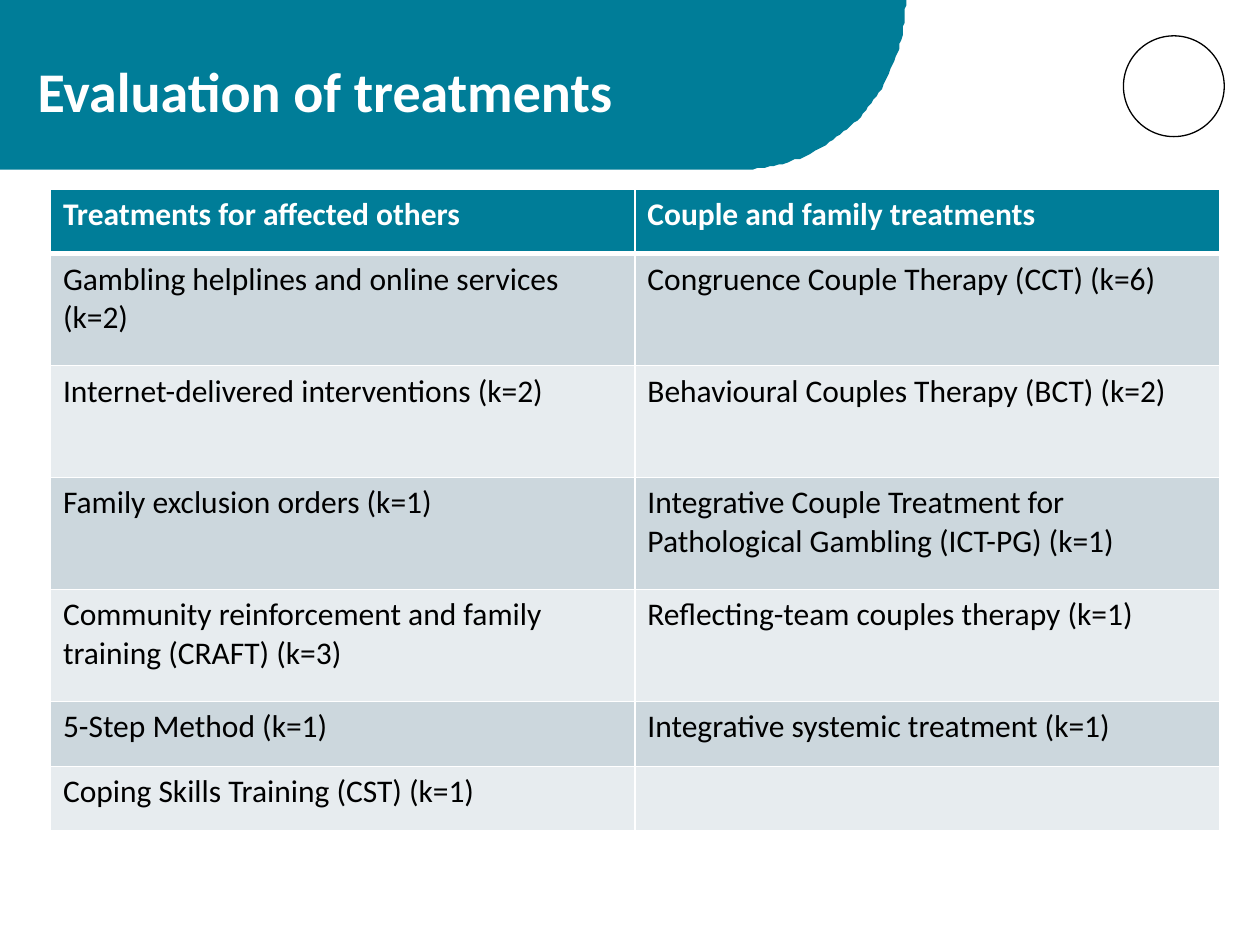
import math
from typing import NamedTuple

from lxml import etree
from pptx import Presentation
from pptx.dml.color import RGBColor
from pptx.enum.shapes import MSO_SHAPE
from pptx.enum.text import MSO_ANCHOR
from pptx.oxml.ns import qn
from pptx.util import Pt

OVAL = MSO_SHAPE.OVAL
TOP = MSO_ANCHOR.TOP
TEAL = RGBColor(0x00, 0x7D, 0x98)
BAND_DARK = RGBColor(0xCC, 0xD7, 0xDD)
BAND_LIGHT = RGBColor(0xE7, 0xEC, 0xEF)
WHITE = RGBColor(0xFF, 0xFF, 0xFF)
BLACK = RGBColor(0x00, 0x00, 0x00)
FONT = "Calibri"
BANNER_WIDTH, BANNER_HEIGHT, CURVE_WIDTH = 517.6, 97, 95
CURVE_STEPS = 60
COLUMN_WIDTH = 334


class TreatmentRow(NamedTuple):
    affected_others: str
    couple_and_family: str
    height: float


TREATMENTS = [
    TreatmentRow("Treatments for affected others", "Couple and family treatments", 37),
    TreatmentRow("Gambling helplines and online services (k=2)",
                 "Congruence Couple Therapy (CCT) (k=6)", 64),
    TreatmentRow("Internet-delivered interventions (k=2)",
                 "Behavioural Couples Therapy (BCT) (k=2)", 64),
    TreatmentRow("Family exclusion orders (k=1)",
                 "Integrative Couple Treatment for Pathological Gambling (ICT-PG) (k=1)", 64),
    TreatmentRow("Community reinforcement and family training (CRAFT) (k=3)",
                 "Reflecting-team couples therapy (k=1)", 64),
    TreatmentRow("5-Step Method (k=1)", "Integrative systemic treatment (k=1)", 37),
    TreatmentRow("Coping Skills Training (CST) (k=1)", "", 37),
]


def style_text(paragraph, size: float, color: RGBColor, bold: bool) -> None:
    font = paragraph.font
    font.name = FONT
    font.size = Pt(size)
    font.bold = bold
    font.color.rgb = color


def draw_banner(slide) -> None:
    curve_start = BANNER_WIDTH - CURVE_WIDTH
    angles = [math.pi / 2 * step / CURVE_STEPS for step in range(CURVE_STEPS + 1)]
    curve = [(curve_start + CURVE_WIDTH * math.cos(angle), BANNER_HEIGHT * math.sin(angle))
             for angle in angles]
    outline = slide.shapes.build_freeform(0, 0, scale=Pt(1))
    outline.add_line_segments(curve + [(0, BANNER_HEIGHT)], close=True)
    banner = outline.convert_to_shape()
    banner.shadow.inherit = False
    banner.fill.solid()
    banner.fill.fore_color.rgb = TEAL
    banner.line.fill.background()


def draw_emblem(slide) -> None:
    emblem = slide.shapes.add_shape(OVAL, Pt(642), Pt(20.5), Pt(57.6), Pt(57.6))
    emblem.shadow.inherit = False
    emblem.fill.background()
    emblem.line.color.rgb = BLACK
    emblem.line.width = Pt(0.75)


def draw_title(slide) -> None:
    title = slide.shapes.add_textbox(Pt(14.4), Pt(33), Pt(503), Pt(64)).text_frame
    title.word_wrap = True
    title.vertical_anchor = TOP
    heading = title.paragraphs[0]
    heading.text = "Evaluation of treatments"
    heading.line_spacing = 0.9
    style_text(heading, 32, WHITE, True)


def set_borders(cell, top: float, bottom: float) -> None:
    properties = cell._tc.get_or_add_tcPr()
    widths = {"a:lnL": 1, "a:lnR": 1, "a:lnT": top, "a:lnB": bottom}
    for index, (tag, width) in enumerate(widths.items()):
        border = etree.Element(qn(tag), w=str(Pt(width)))
        fill = etree.SubElement(border, qn("a:solidFill"))
        etree.SubElement(fill, qn("a:srgbClr"), val=str(WHITE))
        properties.insert(index, border)


def draw_treatments(slide, treatments: list[TreatmentRow]) -> None:
    table = slide.shapes.add_table(
        len(treatments), 2, Pt(28.8), Pt(108), Pt(2 * COLUMN_WIDTH),
        Pt(sum(treatment.height for treatment in treatments))).table
    for column in table.columns:
        column.width = Pt(COLUMN_WIDTH)
    for index, treatment in enumerate(treatments):
        table.rows[index].height = Pt(treatment.height)
        is_header = index == 0
        band = TEAL if is_header else BAND_DARK if index % 2 else BAND_LIGHT
        names = (treatment.affected_others, treatment.couple_and_family)
        for cell, name in zip(table.rows[index].cells, names):
            cell.text = name
            cell.fill.solid()
            cell.fill.fore_color.rgb = band
            style_text(cell.text_frame.paragraphs[0], 18, WHITE if is_header else BLACK, is_header)
            set_borders(cell, 3 if index == 1 else 1, 3 if is_header else 1)


def main() -> None:
    presentation = Presentation()
    presentation.slide_width, presentation.slide_height = Pt(720), Pt(540)
    slide = presentation.slides.add_slide(presentation.slide_layouts[6])
    draw_banner(slide)
    draw_emblem(slide)
    draw_title(slide)
    draw_treatments(slide, TREATMENTS)
    presentation.save("out.pptx")


if __name__ == "__main__":
    main()
